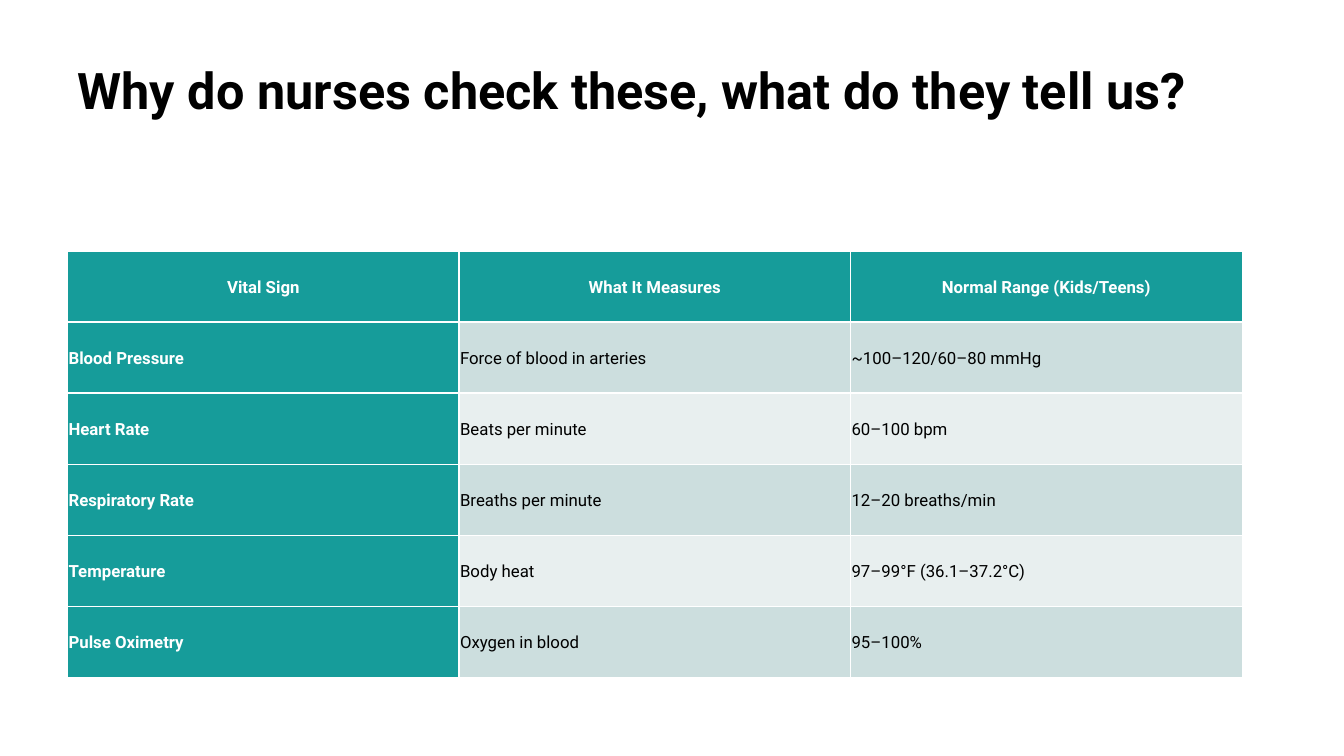
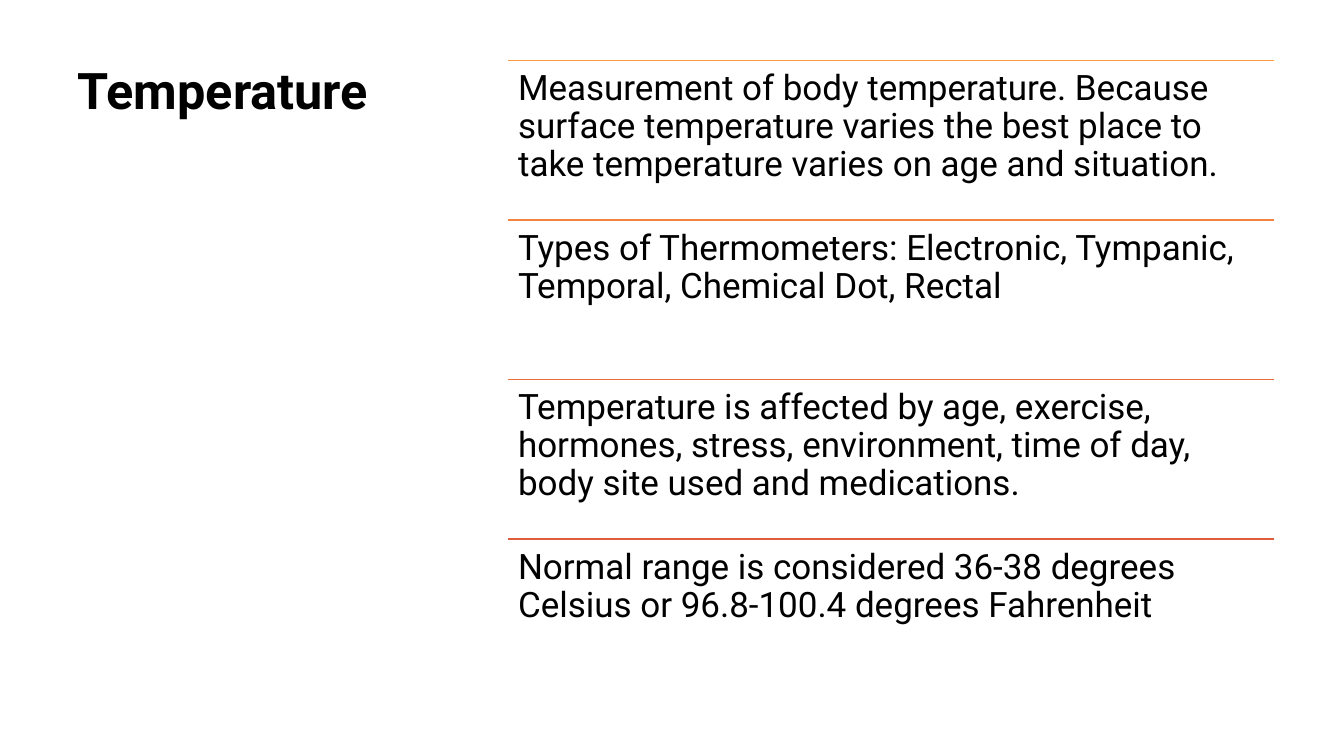
from lxml.etree import SubElement
from pptx import Presentation
from pptx.dml.color import RGBColor
from pptx.enum.shapes import MSO_CONNECTOR as CONN
from pptx.enum.text import MSO_ANCHOR as ANCHOR, MSO_AUTO_SIZE as AUTO, PP_ALIGN as ALIGN
from pptx.oxml.ns import qn
from pptx.util import Inches, Pt

BLACK = RGBColor(0x00, 0x00, 0x00)
WHITE = RGBColor(0xFF, 0xFF, 0xFF)
TEAL = RGBColor(0x16, 0x9C, 0x9A)
BAND_DARK = RGBColor(0xCC, 0xDE, 0xDE)
BAND_LIGHT = RGBColor(0xE8, 0xEF, 0xEF)
RULES = [
    RGBColor(0xFA, 0x9A, 0x42),
    RGBColor(0xF2, 0x84, 0x40),
    RGBColor(0xEA, 0x6F, 0x3E),
    RGBColor(0xE1, 0x5C, 0x3D),
]

LEFT, TOP = 0.67, 0.6
BODY_HEIGHT = 6.33
MARGINS = ("margin_left", "margin_top", "margin_right", "margin_bottom")

VITAL_SIGNS = [
    ("Vital Sign", "What It Measures", "Normal Range (Kids/Teens)"),
    ("Blood Pressure", "Force of blood in arteries", "~100–120/60–80 mmHg"),
    ("Heart Rate", "Beats per minute", "60–100 bpm"),
    ("Respiratory Rate", "Breaths per minute", "12–20 breaths/min"),
    ("Temperature", "Body heat", "97–99°F (36.1–37.2°C)"),
    ("Pulse Oximetry", "Oxygen in blood", "95–100%"),
]
TEMPERATURE_FACTS = [
    "Measurement of body temperature. Because surface temperature varies "
    "the best place to take temperature varies on age and situation.",
    "Types of Thermometers: Electronic, Tympanic, Temporal, Chemical Dot, Rectal",
    "Temperature is affected by age, exercise, hormones, stress, environment, "
    "time of day, body site used and medications.",
    "Normal range is considered 36-38 degrees Celsius or 96.8-100.4 degrees Fahrenheit",
]


def apply(target, values):
    for name, value in values.items():
        setattr(target, name, value)


class Deck:
    font = "Roboto"
    text_para = {"alignment": ALIGN.LEFT, "line_spacing": 0.9}
    cell_para = {"line_spacing": 1.15, "space_after": Pt(8)}
    frame = {"word_wrap": True, "auto_size": AUTO.NONE, "vertical_anchor": ANCHOR.TOP}
    cell_frame = {"vertical_anchor": ANCHOR.MIDDLE, **dict.fromkeys(MARGINS, Inches(0.01))}

    def __init__(self):
        self.prs = Presentation()
        self.prs.slide_width = Inches(13.33)
        self.prs.slide_height = Inches(7.5)
        self.s = None

    def fill_text(self, tf, text, size, color, bold, para):
        p = tf.paragraphs[0]
        apply(p, para)
        r = p.add_run()
        r.text = text
        apply(r.font, {"name": self.font, "size": Pt(size), "bold": bold})
        r.font.color.rgb = color

    def slide(self, title, width, height):
        self.s = self.prs.slides.add_slide(self.prs.slide_layouts[5])
        sp = self.s.shapes.title
        apply(sp, {"left": Inches(LEFT), "top": Inches(TOP),
                   "width": Inches(width), "height": Inches(height)})
        apply(sp.text_frame, self.frame)
        self.fill_text(sp.text_frame, title, 36, BLACK, True, self.text_para)

    def table(self, rows, left, top, width, height):
        tbl = self.s.shapes.add_table(len(rows), len(rows[0]), Inches(left), Inches(top),
                                      Inches(width), Inches(height)).table
        tbl.first_col = True
        for i, row in enumerate(rows):
            for j, text in enumerate(row):
                cell = tbl.cell(i, j)
                apply(cell, self.cell_frame)
                heading = i == 0 or j == 0
                band = BAND_DARK if i % 2 else BAND_LIGHT
                cell.fill.solid()
                cell.fill.fore_color.rgb = TEAL if heading else band
                para = {**self.cell_para, "alignment": ALIGN.LEFT if i else ALIGN.CENTER}
                self.fill_text(cell.text_frame, text, 12, WHITE if heading else BLACK,
                               heading, para)

    def rule(self, left, top, width, color):
        line = self.s.shapes.add_connector(CONN.STRAIGHT, Inches(left), Inches(top),
                                           Inches(left + width), Inches(top))
        line.line.color.rgb = color
        line.line.width = Pt(1)
        SubElement(line._element.spPr, qn("a:effectLst"))

    def text(self, text, left, top, width, height):
        tf = self.s.shapes.add_textbox(Inches(left), Inches(top),
                                       Inches(width), Inches(height)).text_frame
        apply(tf, {**self.frame, **dict.fromkeys(MARGINS, Inches(0.1))})
        self.fill_text(tf, text, 25, BLACK, False, self.text_para)

    def facts(self, items, left, top, width, height):
        step = height / len(items)
        for i, (item, color) in enumerate(zip(items, RULES)):
            y = top + i * step
            self.rule(left, y, width, color)
            self.text(item, left, y, width, step)


def main():
    deck = Deck()
    deck.slide("Why do nurses check these, what do they tell us?", 11.65, 1.24)
    deck.table(VITAL_SIGNS, LEFT, 2.49, 11.65, 4.23)
    deck.slide("Temperature", 3.82, BODY_HEIGHT)
    deck.facts(TEMPERATURE_FACTS, 5.04, TOP, 7.6, BODY_HEIGHT)
    deck.prs.save("out.pptx")


if __name__ == "__main__":
    main()
